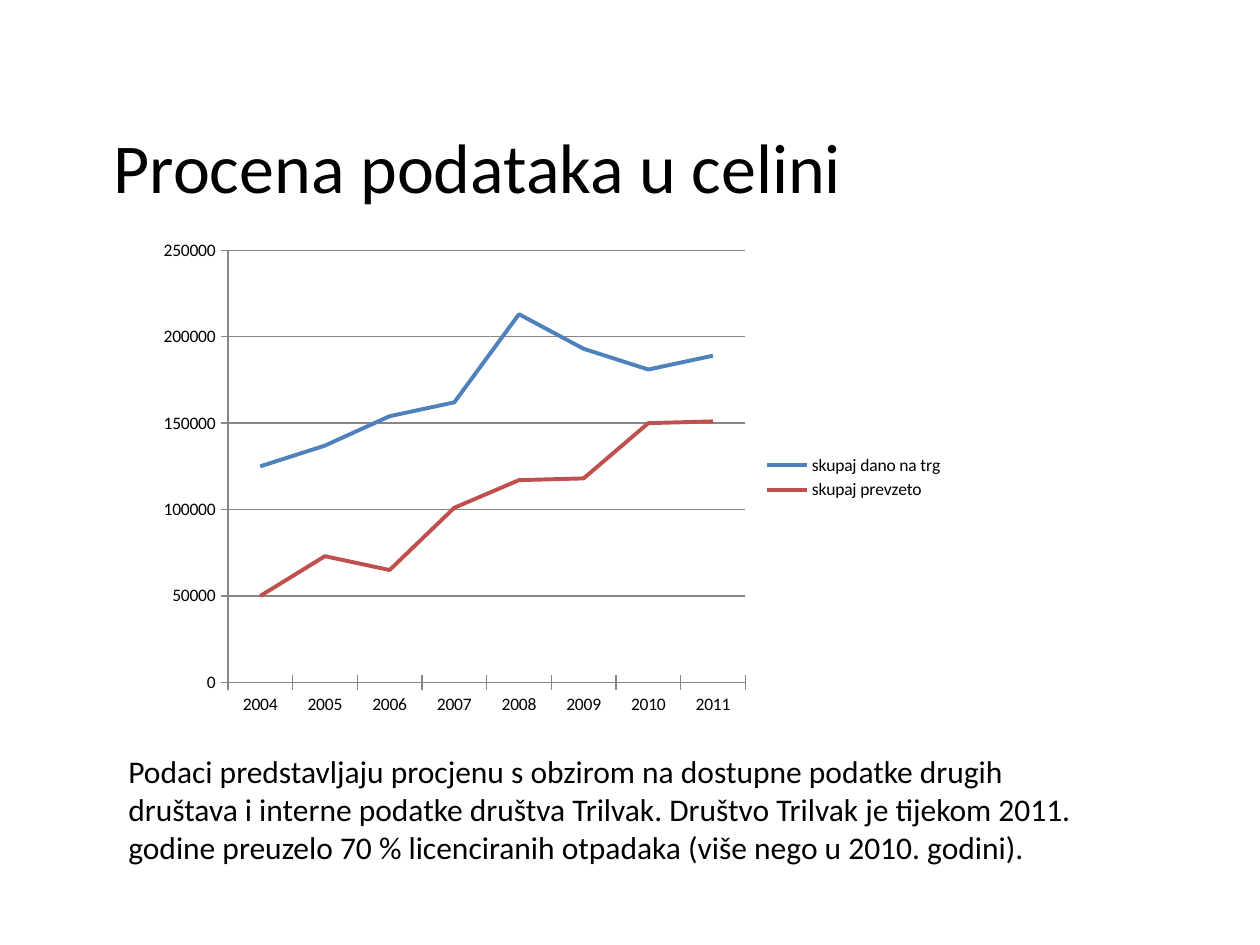
from dataclasses import dataclass

from pptx import Presentation
from pptx.chart.data import CategoryChartData
from pptx.dml.color import RGBColor
from pptx.enum import chart as ch, text
from pptx.util import Inches, Pt

COLORS = {"text": "000000", "grid": "878787", "market": "4F81BD", "collected": "C0504D"}
FONT = "Calibri"


@dataclass
class Series:
    name: str
    thousands: list[int]
    color: str


SERIES = [
    Series("skupaj dano na trg", [125, 137, 154, 162, 213, 193, 181, 189], "market"),
    Series("skupaj prevzeto", [50, 73, 65, 101, 117, 118, 150, 151], "collected"),
]


def rgb(name: str) -> RGBColor:
    return RGBColor.from_string(COLORS[name])


def style_font(font, size: float, color: str = "text") -> None:
    font.name = FONT
    font.size = Pt(size)
    font.color.rgb = rgb(color)


def write(sp, words: str, *, size: float, align=text.PP_ALIGN.LEFT,
          anchor=text.MSO_ANCHOR.TOP, fit=text.MSO_AUTO_SIZE.NONE) -> None:
    tf = sp.text_frame
    tf.word_wrap = True
    tf.auto_size = fit
    tf.vertical_anchor = anchor
    p = tf.paragraphs[0]
    p.alignment = align
    r = p.add_run()
    r.text = words
    style_font(r.font, size)


def style_line(line, color: str, width: float) -> None:
    line.color.rgb = rgb(color)
    line.width = Pt(width)


def add_line_chart(s, series: list[Series], years: range) -> None:
    data = CategoryChartData(number_format="General")
    data.categories = [str(year) for year in years]
    for item in series:
        data.add_series(item.name, [value * 1000 for value in item.thousands])
    chart = s.shapes.add_chart(ch.XL_CHART_TYPE.LINE, Inches(1.17), Inches(1.83),
                               Inches(6.42), Inches(3.92), data).chart
    style_font(chart.font, 10)
    chart.has_title = False
    chart.has_legend = True
    chart.legend.position = ch.XL_LEGEND_POSITION.RIGHT
    chart.legend.include_in_layout = False

    for axis in (chart.category_axis, chart.value_axis):
        axis.major_tick_mark = ch.XL_TICK_MARK.CROSS
        axis.minor_tick_mark = ch.XL_TICK_MARK.NONE
        style_line(axis.format.line, "grid", 0.75)
    chart.value_axis.minimum_scale = 0
    chart.value_axis.maximum_scale = 250000
    chart.value_axis.major_unit = 50000
    chart.value_axis.has_major_gridlines = True
    style_line(chart.value_axis.major_gridlines.format.line, "grid", 0.75)

    plot = chart.plots[0]
    plot.vary_by_categories = False
    for drawn, item in zip(plot.series, series):
        drawn.smooth = False
        drawn.marker.style = ch.XL_MARKER_STYLE.NONE
        style_line(drawn.format.line, item.color, 2.25)


def main() -> None:
    prs = Presentation()
    prs.slide_width, prs.slide_height = Inches(10), Inches(7.5)
    s = prs.slides.add_slide(prs.slide_layouts[5])

    title = s.shapes.title
    title.left, title.top = Inches(0.5), Inches(0.3)
    title.width, title.height = Inches(6.58), Inches(2.03)
    write(title, "Procena podataka u celini", size=40,
          align=text.PP_ALIGN.CENTER, anchor=text.MSO_ANCHOR.MIDDLE)

    note = s.shapes.add_textbox(Inches(0.92), Inches(5.92), Inches(8), Inches(1.01))
    write(note, "Podaci predstavljaju procjenu s obzirom na dostupne podatke drugih "
                "društava i interne podatke društva Trilvak. Društvo Trilvak je tijekom "
                "2011. godine preuzelo 70 % licenciranih otpadaka (više nego u 2010. "
                "godini).", size=18, fit=text.MSO_AUTO_SIZE.SHAPE_TO_FIT_TEXT)

    add_line_chart(s, SERIES, range(2004, 2012))
    prs.save("out.pptx")


if __name__ == "__main__":
    main()
